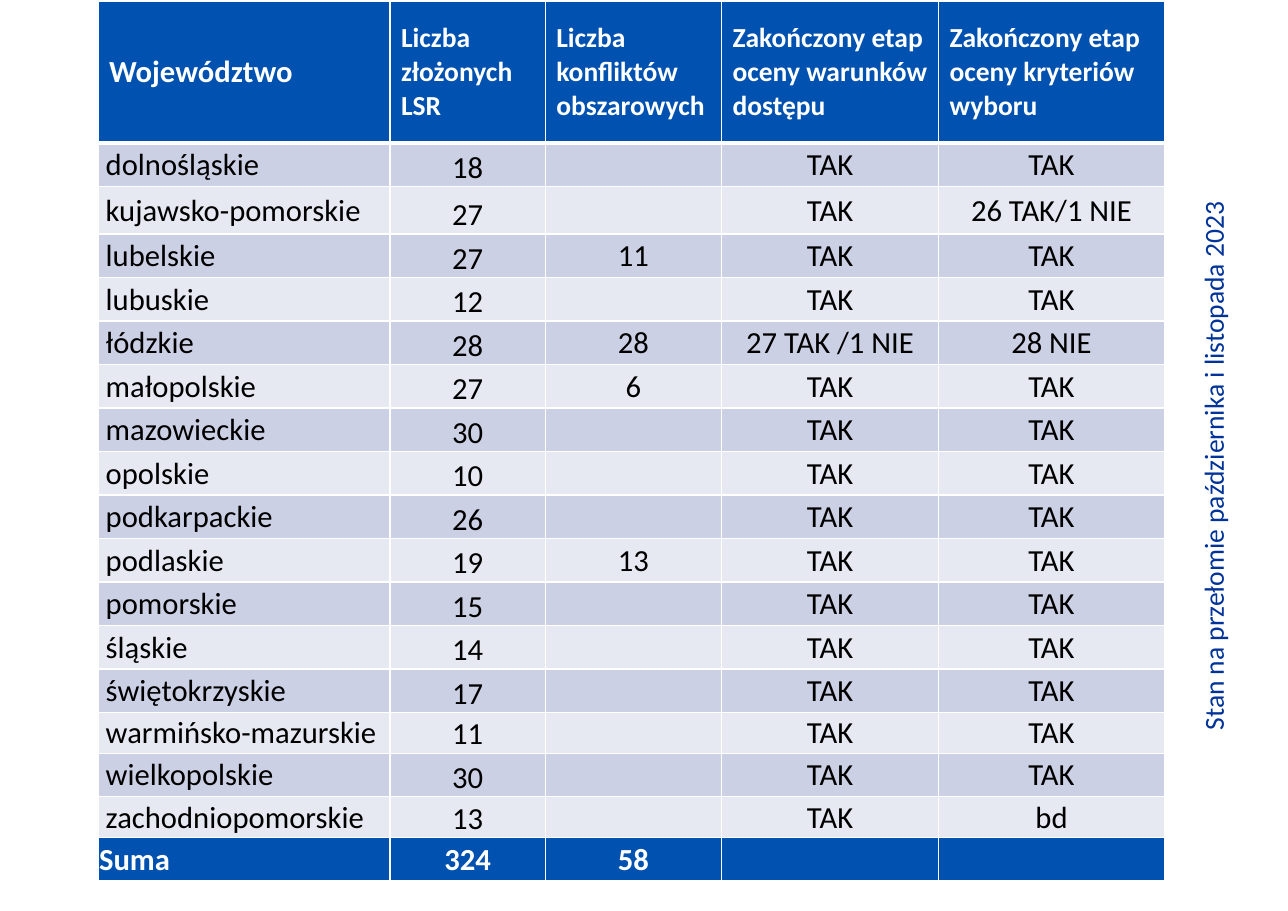
import dataclasses

import pptx
import pptx.dml.color
import pptx.enum.shapes
import pptx.enum.text
import pptx.oxml
import pptx.oxml.ns
import pptx.util

ALIGN = pptx.enum.text.PP_ALIGN
ANCHOR = pptx.enum.text.MSO_ANCHOR


@dataclasses.dataclass(frozen=True)
class Theme:
    font: str = "Calibri"
    navy: str = "003399"
    sky: str = "A6D3FF"
    blue: str = "0051B0"
    bands: tuple = ("CCD0E4", "E7E9F2")
    ink: str = "000000"
    white: str = "FFFFFF"
    text_size: int = 20
    small_size: int = 18
    rule: int = 1
    header_rule: int = 3


HEADINGS = (
    "Województwo",
    "Liczba złożonych LSR",
    "Liczba konfliktów obszarowych",
    "Zakończony etap oceny warunków dostępu",
    "Zakończony etap oceny kryteriów wyboru",
)
REGIONS = (
    ("dolnośląskie", 18),
    ("kujawsko-pomorskie", 27),
    ("lubelskie", 27),
    ("lubuskie", 12),
    ("łódzkie", 28),
    ("małopolskie", 27),
    ("mazowieckie", 30),
    ("opolskie", 10),
    ("podkarpackie", 26),
    ("podlaskie", 19),
    ("pomorskie", 15),
    ("śląskie", 14),
    ("świętokrzyskie", 17),
    ("warmińsko-mazurskie", 11),
    ("wielkopolskie", 30),
    ("zachodniopomorskie", 13),
)
CONFLICTS = {"lubelskie": 11, "łódzkie": 28, "małopolskie": 6, "podlaskie": 13}
ACCESS_STAGE = {"łódzkie": "27 TAK /1 NIE"}
CRITERIA_STAGE = {
    "kujawsko-pomorskie": "26 TAK/1 NIE",
    "łódzkie": "28 NIE",
    "zachodniopomorskie": "bd",
}
COLUMN_SHARES = (22.67, 12.06, 13.69, 16.85, 17.54)
SPECIAL_ROW_SHARES = {0: 15.6, 2: 5.2, 14: 4.47, 16: 4.47}
TABLE_HEIGHT_SHARE = 96.61


def apply_format(target, values):
    for attribute, value in values.items():
        setattr(target, attribute, value)


def rgb(value):
    return pptx.dml.color.RGBColor.from_string(value)


class RegionSlide:
    def __init__(self, presentation, theme):
        self.theme = theme
        self.width = presentation.slide_width
        self.height = presentation.slide_height
        self.slide = presentation.slides.add_slide(presentation.slide_layouts[6])

    def across(self, share):
        return round(self.width * share / 100)

    def down(self, share):
        return round(self.height * share / 100)

    def box(self, left, top, width, height):
        return self.across(left), self.down(top), self.across(width), self.down(height)

    def label(self, paragraph, text, size, color, bold=False, align=ALIGN.LEFT):
        paragraph.alignment = align
        run = paragraph.add_run()
        run.text = text
        apply_format(run.font, {
            "name": self.theme.font, "size": pptx.util.Pt(size), "bold": bold,
        })
        run.font.color.rgb = rgb(color)

    def bar(self, color, *shares):
        strip = self.slide.shapes.add_shape(
            pptx.enum.shapes.MSO_SHAPE.RECTANGLE, *self.box(*shares))
        strip.shadow.inherit = False
        strip.fill.solid()
        strip.fill.fore_color.rgb = rgb(color)
        strip.line.fill.background()

    def side_note(self, text, *shares):
        note = self.slide.shapes.add_textbox(*self.box(*shares))
        note.rotation = 270
        apply_format(note.text_frame, {
            "word_wrap": True,
            "auto_size": pptx.enum.text.MSO_AUTO_SIZE.SHAPE_TO_FIT_TEXT,
        })
        self.label(note.text_frame.paragraphs[0], text,
                   self.theme.small_size, self.theme.navy)

    def borders(self, cell, bottom):
        properties = cell._tc.get_or_add_tcPr()
        rules = {"L": self.theme.rule, "R": self.theme.rule,
                 "T": self.theme.rule, "B": bottom}
        for position, (side, points) in enumerate(rules.items()):
            properties.insert(position, pptx.oxml.parse_xml(
                f'<a:ln{side} {pptx.oxml.ns.nsdecls("a")} w="{pptx.util.Pt(points)}">'
                f'<a:solidFill><a:srgbClr val="{self.theme.white}"/></a:solidFill>'
                f'</a:ln{side}>'))

    def cell(self, cell, text, fill, bottom, layout, **style):
        apply_format(cell, layout)
        cell.fill.solid()
        cell.fill.fore_color.rgb = rgb(fill)
        self.borders(cell, bottom)
        if text != "":
            self.label(cell.text_frame.paragraphs[0], str(text), **style)

    def table(self, records, left, top, column_shares, row_shares):
        theme = self.theme
        grid = self.slide.shapes.add_table(
            len(records), len(column_shares),
            *self.box(left, top, sum(column_shares), sum(row_shares))).table
        grid.horz_banding = False
        for column, share in zip(grid.columns, column_shares):
            column.width = self.across(share)
        for row, share in zip(grid.rows, row_shares):
            row.height = self.down(share)

        edge = pptx.util.Inches(0.01)
        indent = pptx.util.Inches(0.07)
        last = len(records) - 1
        for r, record in enumerate(records):
            header, total = r == 0, r == last
            strong = header or total
            for c, text in enumerate(record):
                layout = {"vertical_anchor": ANCHOR.MIDDLE}
                if not header:
                    layout.update({
                        "margin_left": indent if c == 0 and not total else edge,
                        "margin_right": edge, "margin_top": edge, "margin_bottom": 0,
                    })
                    if c == 1 and not total:
                        layout["vertical_anchor"] = ANCHOR.BOTTOM
                self.cell(
                    grid.cell(r, c), text,
                    theme.blue if strong else theme.bands[(r - 1) % 2],
                    theme.header_rule if header else theme.rule, layout,
                    size=theme.small_size if header and c else theme.text_size,
                    color=theme.white if strong else theme.ink, bold=strong,
                    align=ALIGN.LEFT if header or c == 0 else ALIGN.CENTER)


def main():
    presentation = pptx.Presentation()
    apply_format(presentation, {
        "slide_width": pptx.util.Inches(11.69),
        "slide_height": pptx.util.Inches(8.27),
    })
    theme = Theme()
    page = RegionSlide(presentation, theme)
    page.bar(theme.navy, 9.58, 0, 10.09, 2.42)
    page.bar(theme.sky, 19.67, 0, 70.74, 2.42)
    page.side_note("Stan na przełomie października i listopada 2023",
                   71.94, 47.52, 44.48, 4.84)

    body = [(region, count, CONFLICTS.get(region, ""),
             ACCESS_STAGE.get(region, "TAK"), CRITERIA_STAGE.get(region, "TAK"))
            for region, count in REGIONS]
    total = ("Suma", sum(count for _, count in REGIONS), sum(CONFLICTS.values()), "", "")
    records = [HEADINGS, *body, total]
    regular = ((TABLE_HEIGHT_SHARE - sum(SPECIAL_ROW_SHARES.values()))
               / (len(records) - len(SPECIAL_ROW_SHARES)))
    row_shares = [SPECIAL_ROW_SHARES.get(r, regular) for r in range(len(records))]
    page.table(records, 7.61, 0.12, COLUMN_SHARES, row_shares)
    presentation.save("out.pptx")


if __name__ == "__main__":
    main()
